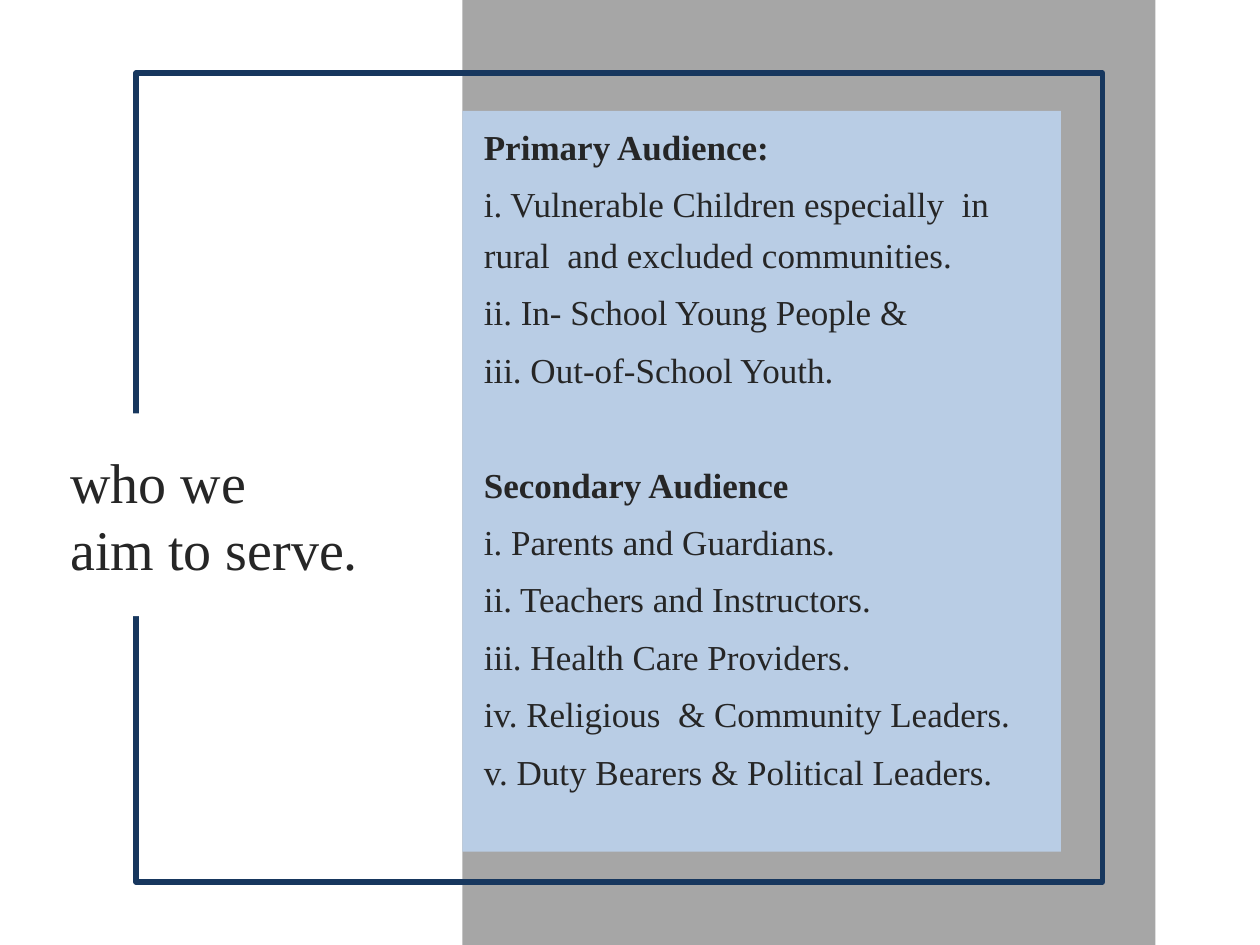
from pptx import Presentation
from pptx.dml.color import RGBColor
from pptx.enum.shapes import MSO_SHAPE as SHAPE
from pptx.enum.text import MSO_ANCHOR as ANCHOR, PP_ALIGN as ALIGN
from pptx.util import Inches, Pt

FONT = "Times New Roman"
COLORS = {"band": "A6A6A6", "panel": "B9CDE5", "frame": "17375E",
          "title": "FFFFFF", "text": "262626"}
AUDIENCES = [
    ("Primary Audience:", [
        "i. Vulnerable Children especially  in rural  and excluded communities.",
        "ii. In- School Young People &",
        "iii. Out-of-School Youth."]),
    ("Secondary Audience", [
        "i. Parents and Guardians.",
        "ii. Teachers and Instructors.",
        "iii. Health Care Providers.",
        "iv. Religious  & Community Leaders.",
        "v. Duty Bearers & Political Leaders."]),
]


def color(name):
    """Return the named colour."""
    return RGBColor.from_string(COLORS[name])


def add_rect(s, box, fill=None, line=None):
    """Add a plain rectangle with an optional fill and outline."""
    sp = s.shapes.add_shape(SHAPE.RECTANGLE, *map(Inches, box))
    sp.shadow.inherit = False
    if fill:
        sp.fill.solid()
        sp.fill.fore_color.rgb = color(fill)
    else:
        sp.fill.background()
    if line:
        sp.line.color.rgb = color(line)
        sp.line.width = Pt(3)
    else:
        sp.line.fill.background()
    return sp


def add_run(p, text, size, bold=False):
    """Add a styled run to a paragraph."""
    r = p.add_run()
    r.text = text
    r.font.name, r.font.size, r.font.bold = FONT, Pt(size), bold
    r.font.color.rgb = color("text")


def add_audiences(s, box):
    """Fill a panel with the audience groups."""
    tf = add_rect(s, box, fill="panel").text_frame
    tf.word_wrap = True
    tf.vertical_anchor = ANCHOR.TOP
    tf.margin_left = Inches(0.17)
    for i, (heading, items) in enumerate(AUDIENCES):
        for j, text in enumerate([heading] + items):
            p = tf.add_paragraph() if i or j else tf.paragraphs[0]
            p.alignment = ALIGN.LEFT
            p.line_spacing = 1.2
            p.space_before = Pt(37 if i and not j else 4)
            add_run(p, text, 20, bold=j == 0)


def add_title(s, box, lines):
    """Place the title over the left edge of the frame."""
    tf = add_rect(s, box, fill="title").text_frame
    tf.word_wrap = True
    tf.vertical_anchor = ANCHOR.MIDDLE
    p = tf.paragraphs[0]
    p.alignment = ALIGN.LEFT
    for i, text in enumerate(lines):
        if i:
            p.add_line_break()
        add_run(p, text, 32)


def main():
    """Build the slide and save it."""
    prs = Presentation()
    prs.slide_width, prs.slide_height = Inches(10), Inches(7.5)
    s = prs.slides.add_slide(prs.slide_layouts[6])
    add_rect(s, (3.67, 0, 5.5, 7.5), fill="band")
    add_audiences(s, (3.67, 0.88, 4.75, 5.88))
    add_rect(s, (1.08, 0.58, 7.67, 6.42), line="frame")
    add_title(s, (0.46, 3.28, 3.12, 1.61), ["who we", "aim to serve."])
    prs.save("out.pptx")


if __name__ == "__main__":
    main()
